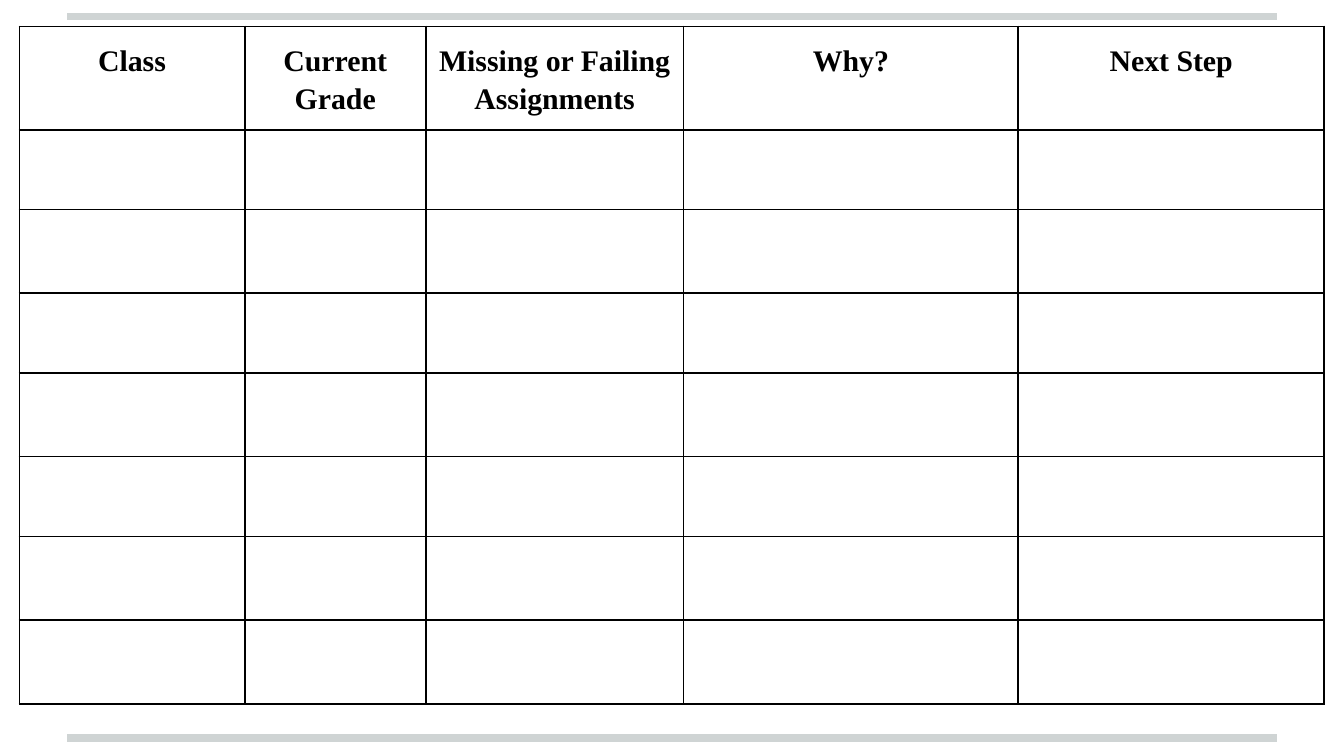
"""Build a blank grade-tracking table slide."""
from lxml.etree import SubElement
from pptx import Presentation
from pptx.dml.color import RGBColor
from pptx.enum.shapes import MSO_CONNECTOR as Connector
from pptx.enum.text import PP_ALIGN as Align
from pptx.oxml import parse_xml
from pptx.oxml.ns import nsdecls, qn
from pptx.util import Pt


def color(hex_value):
    return RGBColor.from_string(hex_value)


def add_border(cell, position, side):
    cell_format = cell._tc.get_or_add_tcPr()
    cell_format.insert(position, parse_xml(
        f'<a:{side} {nsdecls("a")} w="{Pt(1)}"><a:solidFill>'
        f'<a:srgbClr val="000000"/></a:solidFill></a:{side}>'))


prs = Presentation()
prs.slide_width, prs.slide_height = Pt(720), Pt(405)
slide = prs.slides.add_slide(prs.slide_layouts[6])

for rule_y in (395.5, 8.8):
    rule = slide.shapes.add_connector(
        Connector.STRAIGHT, Pt(36), Pt(rule_y), Pt(684), Pt(rule_y))
    rule.line.color.rgb = color("CFD4D4")
    rule.line.width = Pt(4)
    SubElement(rule._element.spPr, qn("a:effectLst"))

headings = ["Class", "Current Grade", "Missing or Failing Assignments", "Why?", "Next Step"]
column_widths = [120.7, 97, 138.2, 179.2, 164]
row_heights = [55.1, 42.7, 44.9, 42.7, 44.9, 42.7, 44.9, 44.9]
grade_table = slide.shapes.add_table(
    len(row_heights), len(headings), Pt(10.4), Pt(14.2),
    Pt(sum(column_widths)), Pt(sum(row_heights))).table
grade_table.first_row = grade_table.horz_banding = False

for column, width in zip(grade_table.columns, column_widths):
    column.width = Pt(width)
for row, height in zip(grade_table.rows, row_heights):
    row.height = Pt(height)

margins = {"margin_left": Pt(5), "margin_right": Pt(5),
           "margin_top": Pt(7.2), "margin_bottom": Pt(7.2)}
for cell in grade_table.iter_cells():
    cell.fill.background()
    for name, value in margins.items():
        setattr(cell, name, value)
    for position, side in enumerate(("lnL", "lnR", "lnT", "lnB")):
        add_border(cell, position, side)

heading_font = {"name": "Times New Roman", "size": Pt(16), "bold": True}
for cell, heading in zip(grade_table.rows[0].cells, headings):
    paragraph = cell.text_frame.paragraphs[0]
    paragraph.alignment = Align.CENTER
    paragraph.line_spacing = 1.15
    run = paragraph.add_run()
    run.text = heading
    run.font.color.rgb = color("000000")
    for name, value in heading_font.items():
        setattr(run.font, name, value)

prs.save("out.pptx")
